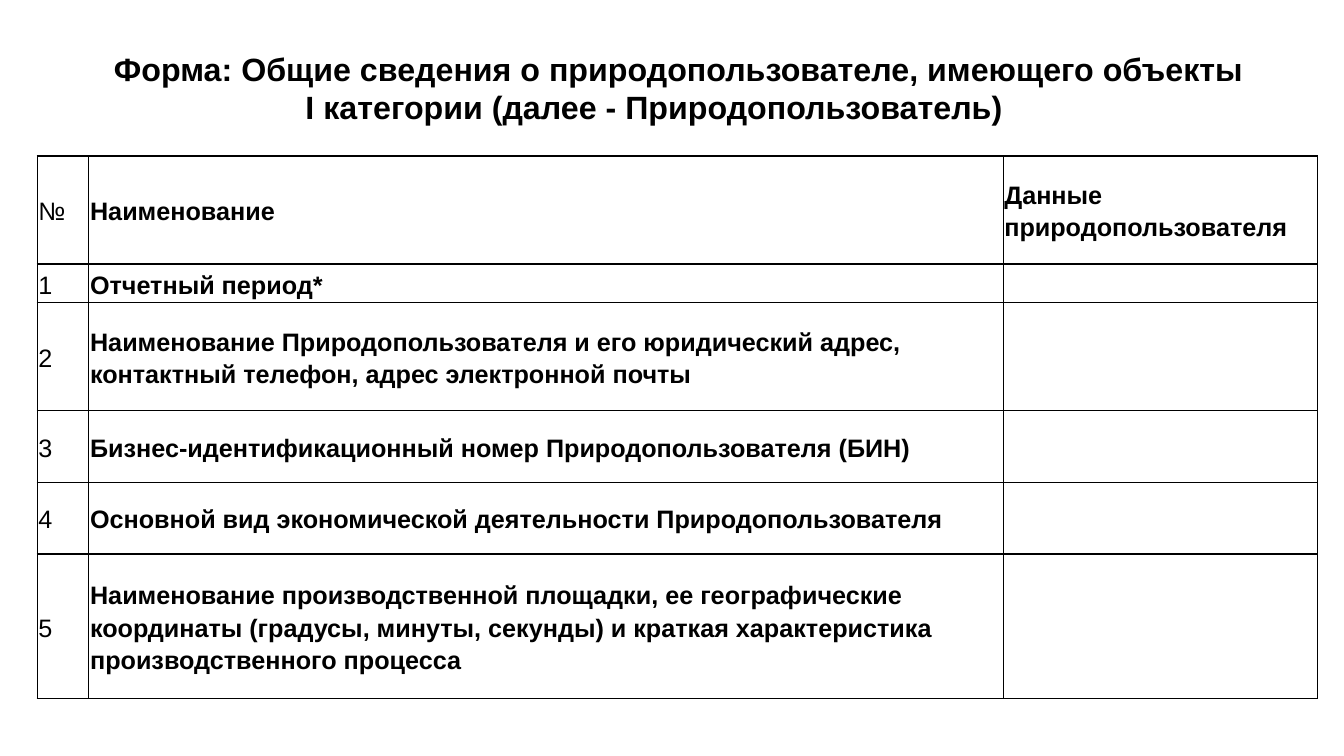
from dataclasses import dataclass

from lxml import etree
from pptx import Presentation
from pptx import util as u
from pptx.dml.color import RGBColor
from pptx.enum import text
from pptx.oxml import ns

COLORS = {"text": "000000", "border": "000000"}
FONT = "Arial"
COLUMN_WIDTHS = (1.3, 23.04, 7.92)
CELL_MARGIN = u.Cm(0.03)


@dataclass(frozen=True)
class FormRow:
    number: str
    name: str
    height: float
    data: str = ""


FORM_ROWS = (
    FormRow("№", "Наименование", 2.72, "Данные природопользователя"),
    FormRow("1", "Отчетный период*", 0.97),
    FormRow("2", "Наименование Природопользователя и его юридический адрес, "
            "контактный телефон, адрес электронной почты", 2.72),
    FormRow("3", "Бизнес-идентификационный номер Природопользователя (БИН)", 1.81),
    FormRow("4", "Основной вид экономической деятельности Природопользователя", 1.81),
    FormRow("5", "Наименование производственной площадки, ее географические "
            "координаты (градусы, минуты, секунды) и краткая характеристика "
            "производственного процесса", 3.64),
)


def format_runs(paragraph, size: float, bold: bool) -> None:
    for run in paragraph.runs:
        run.font.name = FONT
        run.font.size = u.Pt(size)
        run.font.bold = bold
        run.font.color.rgb = RGBColor.from_string(COLORS["text"])


def add_borders(cell) -> None:
    properties = cell._tc.get_or_add_tcPr()
    for side in ("a:lnL", "a:lnR", "a:lnT", "a:lnB"):
        line = etree.SubElement(properties, ns.qn(side), w=str(u.Pt(1)))
        fill = etree.SubElement(line, ns.qn("a:solidFill"))
        etree.SubElement(fill, ns.qn("a:srgbClr"), val=COLORS["border"])


def fill_cell(cell, content: str, bold: bool) -> None:
    add_borders(cell)
    cell.fill.background()
    cell.margin_left = cell.margin_right = CELL_MARGIN
    cell.margin_top = cell.margin_bottom = CELL_MARGIN
    cell.vertical_anchor = text.MSO_ANCHOR.MIDDLE
    if content:
        cell.text_frame.text = content
        paragraph = cell.text_frame.paragraphs[0]
        paragraph.line_spacing = 1.15
        format_runs(paragraph, 18, bold)


def add_title(slide) -> None:
    title = slide.shapes.title
    title.left, title.top = u.Cm(1.19), u.Cm(1.09)
    title.width, title.height = u.Cm(30.61), u.Cm(2.24)
    frame = title.text_frame
    frame.text = ("Форма: Общие сведения о природопользователе, имеющего объекты "
                  "I категории (далее - Природопользователь)")
    frame.word_wrap = True
    frame.auto_size = text.MSO_AUTO_SIZE.NONE
    frame.vertical_anchor = text.MSO_ANCHOR.MIDDLE
    paragraph = frame.paragraphs[0]
    paragraph.alignment = text.PP_ALIGN.CENTER
    paragraph.line_spacing = 1.0
    paragraph.space_before = u.Pt(0)
    paragraph_properties = paragraph._p.get_or_add_pPr()
    paragraph_properties.set("marL", "0")
    paragraph_properties.set("indent", str(u.Cm(1.25)))
    format_runs(paragraph, 23, True)


def add_form_table(slide) -> None:
    height = sum(row.height for row in FORM_ROWS)
    table = slide.shapes.add_table(
        len(FORM_ROWS), len(COLUMN_WIDTHS), u.Cm(0.94), u.Cm(3.93),
        u.Cm(sum(COLUMN_WIDTHS)), u.Cm(height)).table
    table.first_row = False
    table.horz_banding = False
    for column, width in zip(table.columns, COLUMN_WIDTHS):
        column.width = u.Cm(width)
    for table_row, form_row in zip(table.rows, FORM_ROWS):
        table_row.height = u.Cm(form_row.height)
        contents = (form_row.number, form_row.name, form_row.data)
        for index, (cell, content) in enumerate(zip(table_row.cells, contents)):
            fill_cell(cell, content, bold=index > 0)


def main() -> None:
    presentation = Presentation()
    presentation.slide_width = u.Cm(33.87)
    presentation.slide_height = u.Cm(19.05)
    slide = presentation.slides.add_slide(presentation.slide_layouts[5])
    add_title(slide)
    add_form_table(slide)
    presentation.save("out.pptx")


if __name__ == "__main__":
    main()
